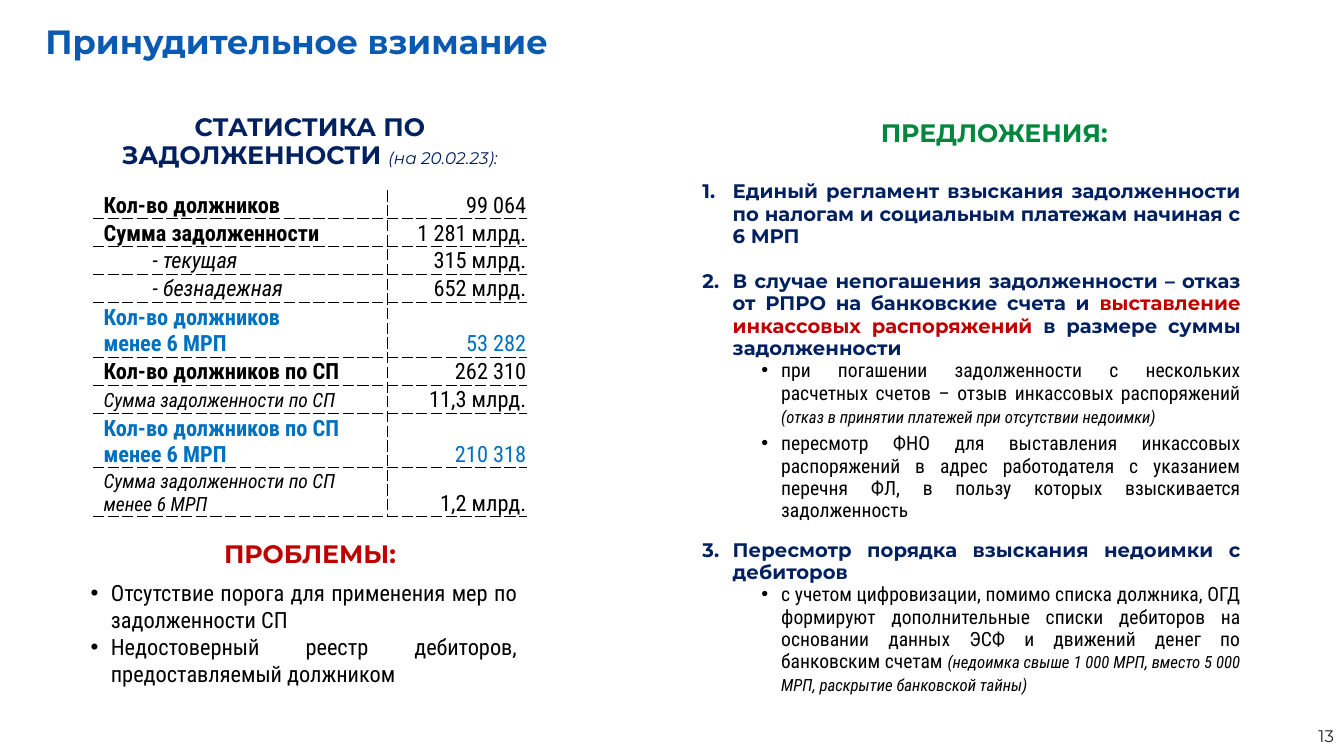
from dataclasses import dataclass

from lxml import etree
from pptx import Presentation
from pptx.dml.color import RGBColor
from pptx.enum.text import MSO_ANCHOR, MSO_AUTO_SIZE, PP_ALIGN
from pptx.oxml.ns import qn
from pptx.util import Pt

LEFT, CENTER, RIGHT = PP_ALIGN.LEFT, PP_ALIGN.CENTER, PP_ALIGN.RIGHT
JUSTIFY = PP_ALIGN.JUSTIFY
TOP, MIDDLE, BOTTOM = MSO_ANCHOR.TOP, MSO_ANCHOR.MIDDLE, MSO_ANCHOR.BOTTOM
NO_AUTOFIT = MSO_AUTO_SIZE.NONE


@dataclass(frozen=True)
class Theme:
    heading_font: str = "Montserrat"
    body_font: str = "Roboto Condensed"
    title_blue: str = "0B5AB2"
    navy: str = "002060"
    red: str = "C00000"
    green: str = "00863D"
    accent: str = "0070C0"
    black: str = "000000"
    gray: str = "262626"
    title_size: int = 24
    heading_size: int = 18
    table_size: int = 16
    text_size: int = 14
    note_size: int = 12


THEME = Theme()


@dataclass(frozen=True)
class Style:
    font: str
    size: int
    color: str
    bold: bool = False
    italic: bool = False


def heading_style(color):
    return Style(THEME.heading_font, THEME.heading_size, color, bold=True)


TITLE = Style(THEME.heading_font, THEME.title_size, THEME.title_blue, bold=True)
DATE = Style(THEME.heading_font, THEME.note_size, THEME.navy, italic=True)
PAGE = Style(THEME.heading_font, THEME.note_size, THEME.gray)
ITEM = Style(THEME.heading_font, THEME.text_size, THEME.navy, bold=True)
ITEM_RED = Style(THEME.heading_font, THEME.text_size, THEME.red, bold=True)
DETAIL = Style(THEME.body_font, THEME.text_size, THEME.black)
NOTE = Style(THEME.body_font, THEME.note_size, THEME.black, italic=True)
PROBLEM = Style(THEME.body_font, THEME.table_size, THEME.black)
VALUE = PROBLEM
TOTAL = Style(THEME.body_font, THEME.table_size, THEME.black, bold=True)
PART = Style(THEME.body_font, THEME.table_size, THEME.black, italic=True)
LIMIT = Style(THEME.body_font, THEME.table_size, THEME.accent, bold=True)
LIMIT_VALUE = Style(THEME.body_font, THEME.table_size, THEME.accent)
SUM = Style(THEME.body_font, THEME.text_size, THEME.black, italic=True)

# Label, value, label style, value style, indent, row height
STATISTICS = [
    ("Кол-во должников", "99 064", TOTAL, VALUE, 7, 20),
    ("Сумма задолженности", "1 281 млрд.", TOTAL, VALUE, 7, 20),
    ("- текущая", "315 млрд.", PART, VALUE, 42, 20),
    ("- безнадежная", "652 млрд.", PART, VALUE, 42, 20),
    ("Кол-во должников\nменее 6 МРП", "53 282", LIMIT, LIMIT_VALUE, 7, 39),
    ("Кол-во должников по СП", "262 310", TOTAL, VALUE, 7, 20),
    ("Сумма задолженности по СП", "11,3 млрд.", SUM, VALUE, 7, 20),
    ("Кол-во должников по СП\nменее 6 МРП", "210 318", LIMIT, LIMIT_VALUE, 7, 39),
    ("Сумма задолженности по СП менее 6 МРП", "1,2 млрд.", SUM, VALUE, 7, 35),
]

PROBLEMS = [
    "Отсутствие порога для применения мер по задолженности СП",
    "Недостоверный реестр дебиторов, предоставляемый должником",
]

# Number (None for a detail), space before, space after, runs
PROPOSALS = [
    (1, 0, 0, [("Единый регламент взыскания задолженности по налогам и социальным "
                "платежам начиная с 6 МРП", ITEM)]),
    (2, 16, 0, [("В случае непогашения задолженности – отказ от РПРО на банковские "
                 "счета и ", ITEM),
                ("выставление инкассовых распоряжений", ITEM_RED),
                (" в размере суммы задолженности", ITEM)]),
    (None, 0, 4, [("при погашении задолженности с нескольких расчетных счетов – отзыв "
                   "инкассовых распоряжений ", DETAIL),
                  ("(отказ в принятии платежей при отсутствии недоимки)", NOTE)]),
    (None, 0, 12, [("пересмотр ФНО для выставления инкассовых распоряжений в адрес "
                    "работодателя с указанием перечня ФЛ, в пользу которых "
                    "взыскивается задолженность", DETAIL)]),
    (3, 0, 0, [("Пересмотр порядка взыскания недоимки с дебиторов", ITEM)]),
    (None, 0, 0, [("с учетом цифровизации, помимо списка должника, ОГД формируют "
                   "дополнительные списки дебиторов на основании данных ЭСФ и движений "
                   "денег по банковским счетам ", DETAIL),
                  ("(недоимка свыше 1 000 МРП, вместо 5 000 МРП, раскрытие банковской "
                   "тайны)", NOTE)]),
]


def format_run(run, style):
    font = run.font
    font.name, font.size = style.font, Pt(style.size)
    font.bold, font.italic = style.bold, style.italic
    font.color.rgb = RGBColor.from_string(style.color)


def fill_paragraph(paragraph, runs, align, line=None, before=0, after=0):
    paragraph.alignment = align
    paragraph.line_spacing = Pt(line) if line else 1.0
    paragraph.space_before, paragraph.space_after = Pt(before), Pt(after)
    for text, style in runs:
        run = paragraph.add_run()
        run.text = text
        format_run(run, style)


def set_bullet(paragraph, indent, hanging, number=None):
    properties = paragraph._p.get_or_add_pPr()
    properties.set("marL", str(Pt(indent)))
    properties.set("indent", str(-Pt(hanging)))
    if number:
        etree.SubElement(properties, qn("a:buFont"), typeface="+mj-lt")
        etree.SubElement(properties, qn("a:buAutoNum"), type="arabicPeriod",
                         startAt=str(number))
    else:
        etree.SubElement(properties, qn("a:buFont"), typeface="Arial")
        etree.SubElement(properties, qn("a:buChar"), char="•")


def place(shape, left, top, width, height, anchor=TOP):
    shape.left, shape.top = Pt(left), Pt(top)
    shape.width, shape.height = Pt(width), Pt(height)
    frame = shape.text_frame
    frame.word_wrap, frame.auto_size = True, NO_AUTOFIT
    frame.vertical_anchor = anchor
    return frame


def add_text(slide, box, runs, align, line=None, anchor=TOP):
    shape = slide.shapes.add_textbox(*map(Pt, box))
    frame = place(shape, *box, anchor)
    fill_paragraph(frame.paragraphs[0], runs, align, line)


def next_paragraph(frame, index):
    return frame.add_paragraph() if index else frame.paragraphs[0]


def fill_problems(placeholder):
    frame = place(placeholder, 57.6, 410.4, 319, 85)
    for index, text in enumerate(PROBLEMS):
        paragraph = next_paragraph(frame, index)
        fill_paragraph(paragraph, [(text, PROBLEM)], JUSTIFY)
        set_bullet(paragraph, 14.4, 14.4)


def fill_proposals(placeholder):
    frame = place(placeholder, 494.6, 125.3, 398.9, 378.7)
    for index, (number, before, after, runs) in enumerate(PROPOSALS):
        paragraph = next_paragraph(frame, index)
        paragraph.level = 0 if number else 1
        fill_paragraph(paragraph, runs, JUSTIFY, 16, before, after)
        if number:
            set_bullet(paragraph, 21.6, 21.6, number)
        else:
            set_bullet(paragraph, 56.2, 14.2)


def set_borders(cell, dashed):
    cell.fill.background()
    properties = cell._tc.get_or_add_tcPr()
    for index, side in enumerate(("lnL", "lnR", "lnT", "lnB")):
        line = etree.Element(qn("a:" + side), w=str(Pt(0.25)))
        if side in dashed:
            fill = etree.SubElement(line, qn("a:solidFill"))
            etree.SubElement(fill, qn("a:srgbClr"), val=THEME.black)
            etree.SubElement(line, qn("a:prstDash"), val="dash")
        else:
            etree.SubElement(line, qn("a:noFill"))
        properties.insert(index, line)


def fill_cell(cell, text, style, align, indent, dashed):
    cell.margin_left = cell.margin_right = cell.margin_top = Pt(0.7)
    cell.margin_bottom = Pt(0)
    cell.vertical_anchor = BOTTOM
    cell.text_frame.text = text
    for paragraph in cell.text_frame.paragraphs:
        paragraph.alignment = align
        paragraph._p.get_or_add_pPr().set("marL", str(Pt(indent)))
        for run in paragraph.runs:
            format_run(run, style)
    set_borders(cell, dashed)


def add_statistics(slide):
    height = sum(row[-1] for row in STATISTICS)
    table = slide.shapes.add_table(len(STATISTICS), 2, Pt(66.3), Pt(136),
                                   Pt(310.3), Pt(height)).table
    table.first_row = table.horz_banding = False
    table.columns[0].width, table.columns[1].width = Pt(210.2), Pt(100.1)
    for index, (label, value, label_style, value_style, indent, size) in enumerate(STATISTICS):
        table.rows[index].height = Pt(size)
        above = {"lnT"} if index else set()
        fill_cell(table.cell(index, 0), label, label_style, LEFT, indent,
                  above | {"lnR", "lnB"})
        fill_cell(table.cell(index, 1), value, value_style, RIGHT, 0,
                  above | {"lnL", "lnB"})


def main():
    presentation = Presentation()
    presentation.slide_width, presentation.slide_height = Pt(960), Pt(540)
    slide = presentation.slides.add_slide(presentation.slide_layouts[3])
    title, problems, proposals = slide.placeholders

    # Title and page number
    frame = place(title, 25.2, 11.5, 784.8, 36)
    fill_paragraph(frame.paragraphs[0], [("Принудительное взимание", TITLE)], LEFT)
    add_text(slide, (893.5, 511.2, 66.5, 28.8), [("13", PAGE)], RIGHT, anchor=MIDDLE)

    # Statistics and problems
    add_text(slide, (69.8, 77.8, 303.1, 47.5),
             [("СТАТИСТИКА ПО ЗАДОЛЖЕННОСТИ ", heading_style(THEME.navy)),
              ("(на 20.02.23):", DATE)], CENTER, 20)
    add_statistics(slide)
    add_text(slide, (70.6, 378.7, 301.7, 30.2),
             [("ПРОБЛЕМЫ:", heading_style(THEME.red))], CENTER, 24)
    fill_problems(problems)

    # Proposals
    add_text(slide, (559.4, 77.8, 301.7, 30.2),
             [("ПРЕДЛОЖЕНИЯ:", heading_style(THEME.green))], CENTER, 24)
    fill_proposals(proposals)

    presentation.save("out.pptx")


if __name__ == "__main__":
    main()
